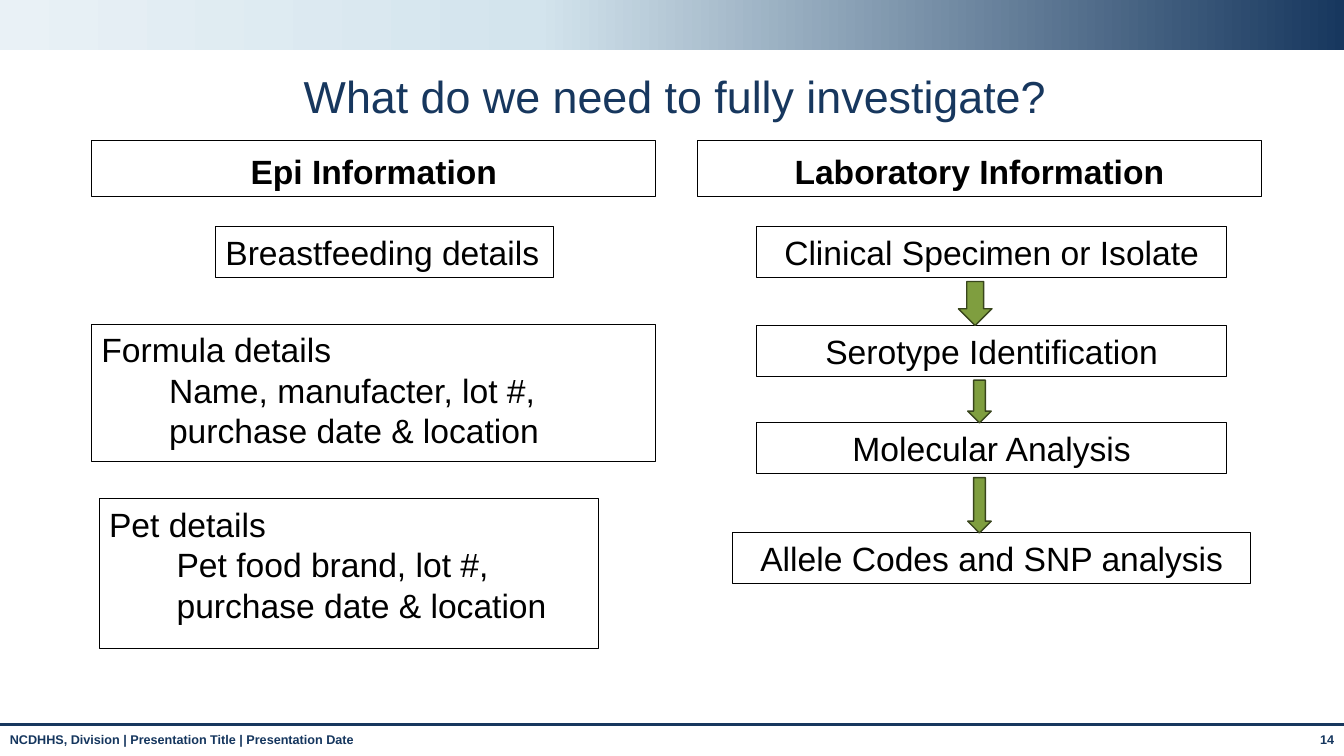
from lxml import etree
from pptx import Presentation
from pptx.dml.color import RGBColor
from pptx.enum.shapes import MSO_CONNECTOR as Connector, MSO_SHAPE as Shape
from pptx.enum.text import MSO_ANCHOR as Anchor, MSO_AUTO_SIZE as AutoSize, PP_ALIGN as Align
from pptx.oxml.ns import qn
from pptx.util import Inches, Pt

NAVY = RGBColor(0x17, 0x37, 0x5E)
FOOTER_NAVY = RGBColor(0x15, 0x36, 0x5E)
BLACK = RGBColor(0, 0, 0)
GREEN = RGBColor(0x7F, 0x9E, 0x3F)
DARK_GREEN = RGBColor(0x38, 0x45, 0x1C)
ICE = RGBColor(0xD3, 0xE4, 0xED)
PALE = RGBColor(0xE9, 0xF1, 0xF6)

COLUMNS, ROWS = 160, 90


class SlideBuilder:
    """Draws styled elements on one slide, measured in grid columns and rows."""

    font_name = "Arial"
    body_size = 24
    detail_indent = Inches(0.67)

    def __init__(self, presentation):
        self.column = presentation.slide_width / COLUMNS
        self.row = presentation.slide_height / ROWS
        self.slide = presentation.slides.add_slide(presentation.slide_layouts[6])

    def place(self, left, top, width, height):
        return (round(left * self.column), round(top * self.row),
                round(width * self.column), round(height * self.row))

    def text(self, area, lines, size=body_size, color=BLACK, bold=False, align=Align.LEFT,
             anchor=Anchor.TOP, spacing=None, wrap=True, grow=False):
        box = self.slide.shapes.add_textbox(*self.place(*area))
        frame = box.text_frame
        frame.text = "\n".join(lines)
        frame.word_wrap = wrap
        frame.vertical_anchor = anchor
        frame.auto_size = AutoSize.SHAPE_TO_FIT_TEXT if grow else AutoSize.NONE
        for level, paragraph in enumerate(frame.paragraphs):
            if level:
                paragraph.level = level
                properties = paragraph._p.get_or_add_pPr()
                properties.set("marL", str(self.detail_indent))
                properties.set("indent", "0")
            paragraph.alignment = align
            paragraph.line_spacing = spacing
            for run in paragraph.runs:
                run.font.name = self.font_name
                run.font.size = Pt(size)
                run.font.bold = bold
                run.font.color.rgb = color
        return box

    def framed(self, area, lines, **style):
        box = self.text(area, lines, **style)
        box.line.color.rgb = BLACK
        box.line.width = Pt(0.75)

    def heading(self, area, label):
        self.framed(area, [label], bold=True, align=Align.CENTER,
                    anchor=Anchor.BOTTOM, spacing=0.9)

    def arrow(self, area):
        arrow = self.slide.shapes.add_shape(Shape.DOWN_ARROW, *self.place(*area))
        arrow.shadow.inherit = False
        arrow.fill.solid()
        arrow.fill.fore_color.rgb = GREEN
        arrow.line.color.rgb = DARK_GREEN
        arrow.line.width = Pt(1)

    def gradient_band(self, area, stops, angle):
        band = self.slide.shapes.add_shape(Shape.RECTANGLE, *self.place(*area))
        band.shadow.inherit = False
        band.line.fill.background()
        band.fill.gradient()
        band.fill.gradient_angle = angle
        stop_list = band._element.spPr.find(qn("a:gradFill")).find(qn("a:gsLst"))
        for stop in list(stop_list):
            stop_list.remove(stop)
        for percent, color in stops:
            stop = etree.SubElement(stop_list, qn("a:gs"), pos=str(percent * 1000))
            etree.SubElement(stop, qn("a:srgbClr"), val=str(color))

    def rule(self, top):
        left, y, width, _ = self.place(0, top, COLUMNS, 0)
        line = self.slide.shapes.add_connector(Connector.STRAIGHT, left, y, left + width, y)
        line.line.color.rgb = NAVY
        line.line.width = Pt(1.75)
        etree.SubElement(line._element.spPr, qn("a:effectLst"))


def main():
    presentation = Presentation()
    presentation.slide_width = Inches(13.33)
    presentation.slide_height = Inches(7.5)
    builder = SlideBuilder(presentation)

    builder.gradient_band((0, 0, COLUMNS, 6), [(0, NAVY), (60, ICE), (100, PALE)], 180)
    builder.rule(86.25)
    footer = {"size": 9, "color": FOOTER_NAVY, "bold": True}
    builder.text((0, 86.6, 140, 3.4),
                 ["NCDHHS, Division | Presentation Title | Presentation Date"], **footer)
    builder.text((152.9, 86.6, 7.1, 3.4), ["14"], align=Align.RIGHT, **footer)
    builder.text((11.8, 8.15, 137.2, 7.2), ["What do we need to fully investigate?"], size=32,
                 color=NAVY, align=Align.CENTER, anchor=Anchor.MIDDLE, spacing=0.9)

    column_width = 67.2
    epi_left, laboratory_left = 10.9, 83
    for left, label in ((epi_left, "Epi Information"),
                        (laboratory_left, "Laboratory Information")):
        builder.heading((left, 16.75, column_width, 6.65), label)

    builder.framed((25.65, 27, 40.2, 6.06), ["Breastfeeding details"], wrap=False, grow=True)
    builder.framed((epi_left, 38.6, column_width, 16.4),
                   ["Formula details", "Name, manufacter, lot #, purchase date & location"])
    builder.framed((11.8, 59.4, 59.5, 17.8),
                   ["Pet details", "Pet food brand, lot #, purchase date & location"])

    step_center, step_height = 118.05, 6.06
    steps = [("Clinical Specimen or Isolate", 27, 56),
             ("Serotype Identification", 38.75, 56),
             ("Molecular Analysis", 50.35, 56),
             ("Allele Codes and SNP analysis", 63.45, 61.7)]
    for label, top, width in steps:
        builder.framed((step_center - width / 2, top, width, step_height), [label],
                       align=Align.CENTER, grow=True)

    arrow_gap = 0.45
    arrows = [(116.1, 4), (116.6, 2.8), (116.6, 2.8)]
    for (center, width), (_, top, _), (_, next_top, _) in zip(arrows, steps, steps[1:]):
        start = top + step_height + arrow_gap
        builder.arrow((center - width / 2, start, width, next_top - start))

    presentation.save("out.pptx")


if __name__ == "__main__":
    main()
